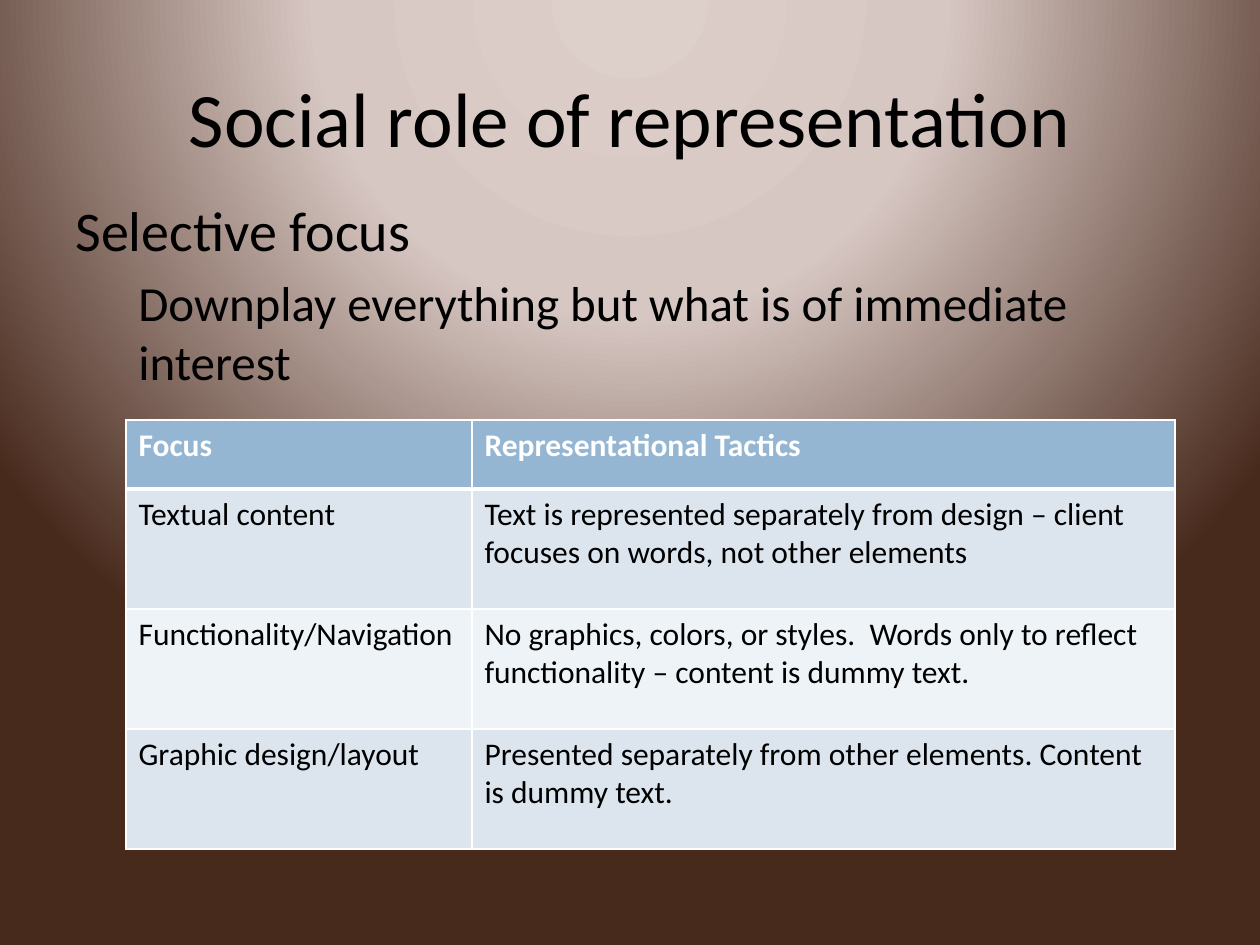
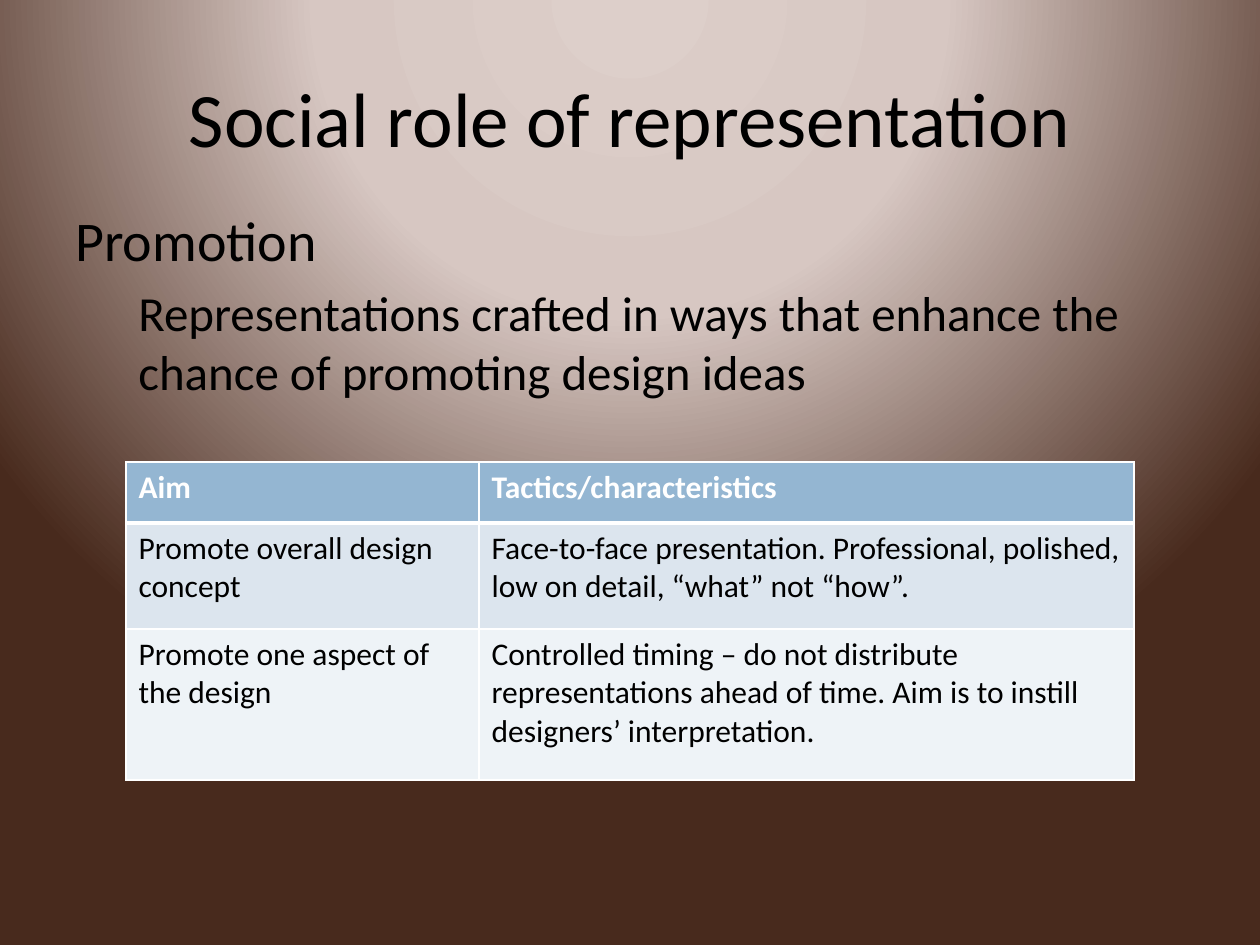
from dataclasses import dataclass

from lxml import etree
from pptx import Presentation
from pptx import util as u
from pptx.dml.color import RGBColor
from pptx.enum import text
from pptx.oxml import ns, parse_xml

# Content
TITLE = "Social role of representation"
SLIDES = [
    {
        "heading": "Selective focus",
        "detail": "Downplay everything but what is of immediate interest",
        "body_box": (63, 189, 1134, 231),
        "table_at": (126, 420),
        "columns": (346, 703),
        "row_heights": (69, 120, 120, 120),
        "rows": [
            ("Focus", "Representational Tactics"),
            ("Textual content",
             "Text is represented separately from design – client focuses on words, "
             "not other elements"),
            ("Functionality/Navigation",
             "No graphics, colors, or styles.  Words only to reflect functionality – "
             "content is dummy text."),
            ("Graphic design/layout",
             "Presented separately from other elements. Content is dummy text."),
        ],
    },
    {
        "heading": "Promotion",
        "detail": "Representations crafted in ways that enhance the chance of "
                  "promoting design ideas",
        "body_box": (63, 199, 1134, 242),
        "table_at": (126, 462),
        "columns": (353, 655),
        "row_heights": (61, 106, 151),
        "rows": [
            ("Aim", "Tactics/characteristics"),
            ("Promote overall design concept",
             "Face-to-face presentation. Professional, polished, low on detail, "
             "“what” not “how”."),
            ("Promote one aspect of the design",
             "Controlled timing – do not distribute representations ahead of time. "
             "Aim is to instill designers’ interpretation."),
        ],
    },
]


@dataclass(frozen=True)
class Theme:
    font: str = "Calibri"
    ink: str = "000000"
    white: str = "FFFFFF"
    header: str = "94B6D2"
    bands: tuple = ("DCE5EE", "EEF3F7")
    backdrop: tuple = ((0, "DDCFCA"), (40, "D7C7C2"), (100, "482A1D"))
    title_size: int = 44
    heading_size: int = 32
    detail_size: int = 28
    cell_size: int = 18
    rule: int = 1
    header_rule: int = 3


THEME = Theme()
SLIDE_SIZE = (1260, 945)
TITLE_BOX = (63, 38, 1134, 158)
DETAIL_INDENT = 63


def px(length):
    return u.Emu(round(length * 914400 / 126))


def add_run(paragraph, words, size, color=THEME.ink, bold=False):
    run = paragraph.add_run()
    run.text = words
    run.font.name = THEME.font
    run.font.size = u.Pt(size)
    run.font.bold = bold
    run.font.color.rgb = RGBColor.from_string(color)


def add_frame(slide, box):
    frame = slide.shapes.add_textbox(*map(px, box)).text_frame
    frame.word_wrap = True
    return frame


def set_backdrop(master):
    """Circular gradient, centred above the slide, shared through the master."""
    master.background.fill.gradient()
    gradient = master.element.xpath(".//p:bgPr/a:gradFill")[0]
    stops = "".join(
        f'<a:gs pos="{place * 1000}"><a:srgbClr val="{color}"/></a:gs>'
        for place, color in THEME.backdrop)
    gradient.getparent().replace(gradient, parse_xml(
        f'<a:gradFill {ns.nsdecls("a")} rotWithShape="1"><a:gsLst>{stops}</a:gsLst>'
        '<a:path path="circle">'
        '<a:fillToRect l="50000" t="-80000" r="50000" b="180000"/>'
        '</a:path></a:gradFill>'))


def set_borders(cell, top, bottom):
    properties = cell._tc.get_or_add_tcPr()
    widths = {"lnL": THEME.rule, "lnR": THEME.rule, "lnT": top, "lnB": bottom}
    for place, (side, width) in enumerate(widths.items()):
        line = etree.Element(ns.qn(f"a:{side}"), w=str(u.Pt(width)))
        fill = etree.SubElement(line, ns.qn("a:solidFill"))
        etree.SubElement(fill, ns.qn("a:srgbClr"), val=THEME.white)
        properties.insert(place, line)


def add_title(slide):
    frame = add_frame(slide, TITLE_BOX)
    frame.vertical_anchor = text.MSO_ANCHOR.MIDDLE
    paragraph = frame.paragraphs[0]
    paragraph.alignment = text.PP_ALIGN.CENTER
    add_run(paragraph, TITLE, THEME.title_size)


def add_body(slide, content):
    frame = add_frame(slide, content["body_box"])
    heading, detail = frame.paragraphs[0], frame.add_paragraph()
    detail.level = 1
    detail._p.get_or_add_pPr().set("marL", str(px(DETAIL_INDENT)))
    for paragraph, words, size in (
            (heading, content["heading"], THEME.heading_size),
            (detail, content["detail"], THEME.detail_size)):
        paragraph.space_before = u.Pt(size * 0.2)
        add_run(paragraph, words, size)


def add_tactics_table(slide, content):
    rows, columns, heights = (content[k] for k in ("rows", "columns", "row_heights"))
    box = (*content["table_at"], sum(columns), sum(heights))
    table = slide.shapes.add_table(len(rows), len(columns), *map(px, box)).table
    for column, width in zip(table.columns, columns):
        column.width = px(width)
    for r, (row, height) in enumerate(zip(rows, heights)):
        table.rows[r].height = px(height)
        is_header = r == 0
        fill = THEME.header if is_header else THEME.bands[(r - 1) % 2]
        for c, words in enumerate(row):
            cell = table.cell(r, c)
            cell.fill.solid()
            cell.fill.fore_color.rgb = RGBColor.from_string(fill)
            set_borders(cell,
                        top=THEME.header_rule if r == 1 else THEME.rule,
                        bottom=THEME.header_rule if is_header else THEME.rule)
            add_run(cell.text_frame.paragraphs[0], words, THEME.cell_size,
                    THEME.white if is_header else THEME.ink, is_header)


def main():
    prs = Presentation()
    prs.slide_width, prs.slide_height = map(px, SLIDE_SIZE)
    set_backdrop(prs.slide_master)
    for content in SLIDES:
        slide = prs.slides.add_slide(prs.slide_layouts[6])
        add_title(slide)
        add_body(slide, content)
        add_tactics_table(slide, content)
    prs.save("out.pptx")


if __name__ == "__main__":
    main()
